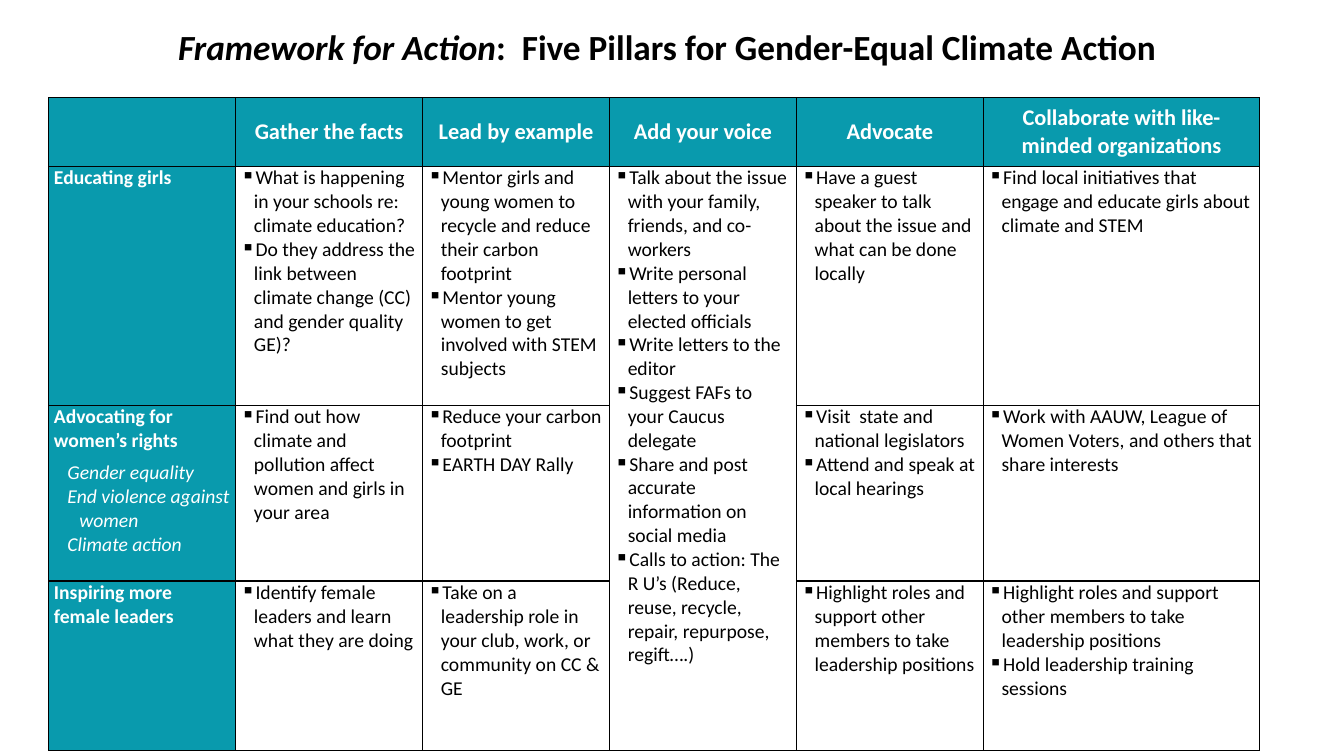
from pptx import Presentation
from pptx.dml.color import RGBColor
from pptx.enum.text import MSO_ANCHOR, MSO_AUTO_SIZE, PP_ALIGN
from pptx.oxml.ns import qn
from pptx.util import Cm, Pt
from lxml import etree

TEAL = RGBColor(0x09, 0x9A, 0xAD)
WHITE = RGBColor(0xFF, 0xFF, 0xFF)
BLACK = RGBColor(0, 0, 0)
CENTER, LEFT = PP_ALIGN.CENTER, PP_ALIGN.LEFT
TOP, MIDDLE, BOTTOM = MSO_ANCHOR.TOP, MSO_ANCHOR.MIDDLE, MSO_ANCHOR.BOTTOM
NO_AUTOFIT = MSO_AUTO_SIZE.NONE

PILLARS = ["", "Gather the facts", "Lead by example", "Add your voice", "Advocate",
           "Collaborate with like-minded organizations"]
VOICE_COL = 3
VOICE = ["Talk about the issue with your family, friends, and co-workers",
         "Write personal letters to your elected officials",
         "Write letters to the editor",
         "Suggest FAFs to your Caucus delegate",
         "Share and post accurate information on social media",
         "Calls to action: The R U’s (Reduce, reuse, recycle, repair, repurpose, regift….)"]
# Each goal: name, sub-goals, then one list of actions per pillar column
GOALS = [
    ("Educating girls", [], [
        ["What is happening in your schools re: climate education?",
         "Do they address the link between climate change (CC) and gender quality GE)?"],
        ["Mentor girls and young women to recycle and reduce their carbon footprint",
         "Mentor young women to get involved with STEM subjects"],
        VOICE,
        ["Have a guest speaker to talk about the issue and what can be done locally"],
        ["Find local initiatives that engage and educate girls about climate and STEM"]]),
    ("Advocating for women’s rights",
     ["Gender equality", "End violence against women", "Climate action"], [
         ["Find out how climate and pollution affect women and girls in your area"],
         ["Reduce your carbon footprint", "EARTH DAY Rally"],
         [],
         ["Visit  state and national legislators", "Attend and speak at local hearings"],
         ["Work with AAUW, League of Women Voters, and others that share interests"]]),
    ("Inspiring more female leaders", [], [
        ["Identify female leaders and learn what they are doing"],
        ["Take on a leadership role in your club, work, or community on CC & GE"],
        [],
        ["Highlight roles and support other members to take leadership positions"],
        ["Highlight roles and support other members to take leadership positions",
         "Hold leadership training sessions"]]),
]
COL_WIDTHS = [4.71] * 5 + [6.97]
ROW_HEIGHTS = [1.73, 6.02, 4.43, 4.28]


class SlideBuilder:
    font = "Calibri"

    def __init__(self, prs):
        self.s = prs.slides.add_slide(prs.slide_layouts[5])

    def style(self, p, size, color, bold=False, italic=False):
        f = p.font
        f.name, f.size, f.bold, f.italic = self.font, Pt(size), bold, italic
        f.color.rgb = color

    def title(self, lead, rest):
        sp = self.s.shapes.title
        sp.left, sp.top, sp.width, sp.height = Cm(2.21), Cm(0.76), Cm(29.21), Cm(1.04)
        tf = sp.text_frame
        tf.auto_size, tf.vertical_anchor = NO_AUTOFIT, BOTTOM
        p = tf.paragraphs[0]
        p.alignment, p.line_spacing = CENTER, 0.7
        self.style(p, 25.2, BLACK, bold=True)
        r = p.add_run()
        r.text, r.font.italic = lead, True
        p.add_run().text = rest

    def table(self, left, top, widths, heights):
        frame = self.s.shapes.add_table(len(heights), len(widths), Cm(left), Cm(top),
                                        Cm(sum(widths)), Cm(sum(heights)))
        table = frame.table
        table.first_row = table.horz_banding = False
        for column, width in zip(table.columns, widths):
            column.width = Cm(width)
        for row, height in zip(table.rows, heights):
            row.height = Cm(height)
        return table

    def cell(self, cell, fill=None, anchor=TOP):
        """Set margins, black borders and fill of a table cell."""
        cell.margin_left = cell.margin_right = Cm(0.13)
        cell.margin_top = cell.margin_bottom = 0
        cell.vertical_anchor = anchor
        tc_pr = cell._tc.get_or_add_tcPr()
        for side in ("a:lnL", "a:lnR", "a:lnT", "a:lnB"):
            ln = etree.SubElement(tc_pr, qn(side), w=str(Pt(1)))
            solid = etree.SubElement(ln, qn("a:solidFill"))
            etree.SubElement(solid, qn("a:srgbClr"), val=str(BLACK))
        if fill is None:
            cell.fill.background()
        else:
            cell.fill.solid()
            cell.fill.fore_color.rgb = fill

    def heading(self, cell, text, size, align=LEFT):
        p = cell.text_frame.paragraphs[0]
        p.text, p.alignment, p.space_after = text, align, Pt(6)
        self.style(p, size, WHITE, bold=True)

    def indent(self, p, left, hanging):
        p_pr = p._p.get_or_add_pPr()
        p_pr.set("marL", str(Cm(left)))
        p_pr.set("indent", str(-Cm(hanging)))
        return p_pr

    def sub_goals(self, cell, items):
        for item in items:
            p = cell.text_frame.add_paragraph()
            p.text = item
            self.indent(p, 0.64, 0.3)
            self.style(p, 14, WHITE, italic=True)

    def bullets(self, cell, items):
        tf = cell.text_frame
        for i, item in enumerate(items):
            p = tf.add_paragraph() if i else tf.paragraphs[0]
            p.text = item
            p_pr = self.indent(p, 0.33, 0.33)
            etree.SubElement(p_pr, qn("a:buChar"), char="▪")
            self.style(p, 14, BLACK)


def main():
    prs = Presentation()
    prs.slide_width, prs.slide_height = Cm(33.87), Cm(19.05)
    slide = SlideBuilder(prs)
    slide.title("Framework for Action", ":  Five Pillars for Gender-Equal Climate Action")
    table = slide.table(1.23, 2.46, COL_WIDTHS, ROW_HEIGHTS)
    for col, pillar in enumerate(PILLARS):
        cell = table.cell(0, col)
        slide.cell(cell, TEAL, MIDDLE)
        if pillar:
            slide.heading(cell, pillar, 16, CENTER)
    for row, (goal, sub_goals, actions) in enumerate(GOALS, 1):
        goal_cell = table.cell(row, 0)
        slide.cell(goal_cell, TEAL)
        slide.heading(goal_cell, goal, 14)
        slide.sub_goals(goal_cell, sub_goals)
        for col, items in enumerate(actions, 1):
            slide.cell(table.cell(row, col))
            slide.bullets(table.cell(row, col), items)
    table.cell(1, VOICE_COL).merge(table.cell(len(GOALS), VOICE_COL))
    prs.save("out.pptx")


if __name__ == "__main__":
    main()
